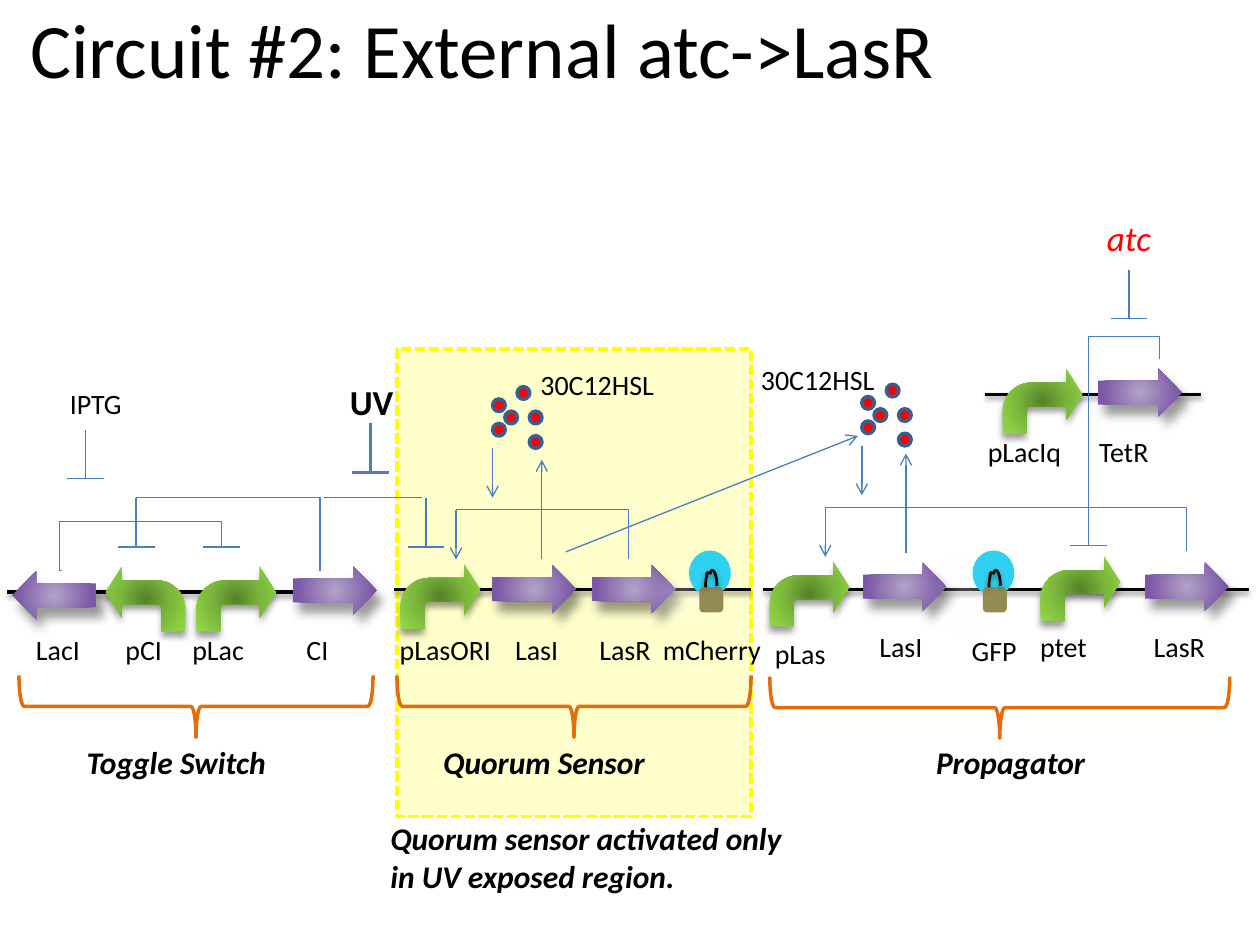
from lxml.etree import SubElement
from pptx import Presentation
from pptx.dml.color import RGBColor
from pptx.enum.dml import MSO_LINE
from pptx.enum.shapes import MSO_CONNECTOR, MSO_SHAPE
from pptx.enum.text import MSO_ANCHOR, PP_ALIGN
from pptx.oxml.ns import qn
from pptx.util import Pt

COLORS = {
    "text": "000000", "signal": "FF0000", "wire": "4B7EBC", "dot_edge": "3A5F8C",
    "highlight": "FFFF00", "brace": "E46C0A", "glow": "FFFFFF",
    "reporter": "30D0F0", "base": "948A54",
}
PROMOTER_STOPS = [(0, "57812A"), (50, "7BB73B"), (100, "92DA46")]
GENE_STOPS = [(0, "B3A2C7"), (80, "7B58A6"), (100, "7C57A8")]
# Shadows: color, opacity %, blur, distance, direction in degrees
AXIS_SHADOW = ("text", 38, 3.1, 1.6, 90)
PROMOTER_SHADOW = ("text", 40, 4, 3, 90)
GENE_SHADOW = ("text", 40, 6, 7, 60)
REPORTER_SHADOW = ("glow", 28, 11.8, 19.7, 141)

DOT_OFFSETS = [(7, 14), (21, 28), (21, 14), (14, 0), (0, 7), (0, 21)]
LOOP_START = (9.4, 20.9)
LOOP_CURVES = [
    ((9.4, 18.7), (9.4, 16.6), (10.1, 14.4)),
    ((10.1, 13.7), (10.1, 13), (10.1, 13)),
    ((10.8, 12.2), (11.5, 13), (12.2, 13)),
    ((12.2, 12.2), (13, 10.1), (14.4, 12.2)),
    ((15.8, 14.4), (15.8, 18), (15.8, 20.2)),
]


def rgb(name):
    return RGBColor.from_string(COLORS[name])


def curve_points(start, curves, steps=6):
    """Sample a chain of cubic Bezier curves."""
    points = [start]
    for first, second, end in curves:
        origin = points[-1]
        for step in range(1, steps + 1):
            t = step / steps
            u = 1 - t
            points.append(tuple(
                u**3 * a + 3 * u * u * t * b + 3 * u * t * t * c + t**3 * d
                for a, b, c, d in zip(origin, first, second, end)))
    return points


def add_shadow(shape, shadow):
    color, opacity, blur, distance, angle = shadow
    properties = shape._element.spPr
    for effects in properties.findall(qn("a:effectLst")):
        properties.remove(effects)
    outer = SubElement(SubElement(properties, qn("a:effectLst")), qn("a:outerShdw"),
                       blurRad=str(Pt(blur)), dist=str(Pt(distance)),
                       dir=str(angle * 60000), rotWithShape="0")
    tint = SubElement(outer, qn("a:srgbClr"), val=COLORS[color])
    SubElement(tint, qn("a:alpha"), val=str(opacity * 1000))


def fill_radial(shape, stops):
    properties = shape._element.spPr
    properties.remove(properties.find(qn("a:noFill")))
    gradient = properties.makeelement(qn("a:gradFill"), rotWithShape="1")
    stop_list = SubElement(gradient, qn("a:gsLst"))
    for position, color in stops:
        stop = SubElement(stop_list, qn("a:gs"), pos=str(position * 1000))
        SubElement(stop, qn("a:srgbClr"), val=color)
    circle = SubElement(gradient, qn("a:path"), path="circle")
    SubElement(circle, qn("a:fillToRect"), l="50000", t="50000", r="50000", b="50000")
    properties.find(qn("a:prstGeom")).addnext(gradient)


class CircuitSlide:
    """Draws gene circuit elements on one page; all lengths are points."""
    font = "Calibri"

    def __init__(self, page):
        self.page = page

    def set_text(self, frame, text, size, color="text", bold=False, italic=False,
                 align=PP_ALIGN.CENTER):
        frame.word_wrap = True
        frame.text = text
        para = frame.paragraphs[0]
        para.alignment = align
        font = para.font
        font.name, font.size, font.bold, font.italic = self.font, Pt(size), bold, italic
        font.color.rgb = rgb(color)

    def title(self, text, left, top, width, height):
        box = self.page.shapes.title
        box.left, box.top, box.width, box.height = map(Pt, (left, top, width, height))
        box.text_frame.vertical_anchor = MSO_ANCHOR.MIDDLE
        self.set_text(box.text_frame, text, 44)

    def label(self, text, center, top, width=82.1, size=16, **style):
        box = self.page.shapes.add_textbox(Pt(center - width / 2), Pt(top), Pt(width), Pt(24))
        self.set_text(box.text_frame, text, size, **style)

    def caption(self, text, left, top, width=175.7, height=35.3):
        box = self.page.shapes.add_textbox(Pt(left), Pt(top), Pt(width), Pt(height))
        self.set_text(box.text_frame, text, 18, bold=True, italic=True, align=PP_ALIGN.LEFT)

    def shape(self, kind, left, top, width, height, fill=None, line=None, weight=2):
        shape = self.page.shapes.add_shape(kind, Pt(left), Pt(top), Pt(width), Pt(height))
        shape.shadow.inherit = False
        if fill:
            shape.fill.solid()
            shape.fill.fore_color.rgb = rgb(fill)
        else:
            shape.fill.background()
        if line:
            shape.line.color.rgb = rgb(line)
            shape.line.width = Pt(weight)
        else:
            shape.line.fill.background()
        return shape

    def line(self, x1, y1, x2, y2, weight=0.75, color="wire", arrow=False, bend=None):
        """Draw a straight line, or an elbow that turns at the share `bend` of its width."""
        kind = MSO_CONNECTOR.STRAIGHT if bend is None else MSO_CONNECTOR.ELBOW
        wire = self.page.shapes.add_connector(kind, Pt(x1), Pt(y1), Pt(x2), Pt(y2))
        wire.line.color.rgb = rgb(color)
        wire.line.width = Pt(weight)
        properties = wire._element.spPr
        if arrow:
            SubElement(properties.find(qn("a:ln")), qn("a:tailEnd"), type="arrow")
        if bend is not None:
            guides = properties.find(qn("a:prstGeom")).find(qn("a:avLst"))
            SubElement(guides, qn("a:gd"), name="adj1", fmla=f"val {round(bend * 100000)}")
        SubElement(properties, qn("a:effectLst"))
        return wire

    def axis(self, left, right, y):
        add_shadow(self.line(left, y, right, y, weight=2, color="text"), AXIS_SHADOW)

    def bar(self, x, y, weight=0.75):
        self.line(x - 10.5, y, x + 10.5, y, weight)

    def inhibitor(self, x, top, bottom, weight=0.75):
        self.line(x, top, x, bottom, weight)
        self.bar(x, bottom, weight)

    def promoter(self, left, top, mirrored=False):
        arrow = self.shape(MSO_SHAPE.BENT_ARROW, left, top, 45.4, 36.7)
        for index, value in enumerate((0.37, 0.394, 0.25, 0.438)):
            arrow.adjustments[index] = value
        if mirrored:
            arrow._element.spPr.find(qn("a:xfrm")).set("flipH", "1")
        fill_radial(arrow, PROMOTER_STOPS)
        add_shadow(arrow, PROMOTER_SHADOW)

    def gene(self, x, y, rotation=270):
        arrow = self.shape(MSO_SHAPE.DOWN_ARROW, x - 13.7, y - 24.1, 27.4, 48.2)
        arrow.rotation = rotation
        fill_radial(arrow, GENE_STOPS)
        add_shadow(arrow, GENE_SHADOW)

    def reporter(self, left, top):
        head = self.shape(MSO_SHAPE.OVAL, left, top, 23.8, 25.9, "reporter")
        add_shadow(head, REPORTER_SHADOW)
        self.shape(MSO_SHAPE.ROUNDED_RECTANGLE, left + 5.8, top + 20.9, 13.7, 14.4, "base")
        points = [(Pt(left + x), Pt(top + y)) for x, y in curve_points(LOOP_START, LOOP_CURVES)]
        builder = self.page.shapes.build_freeform(*points[0])
        builder.add_line_segments(points[1:], close=False)
        loop = builder.convert_to_shape()
        loop.fill.background()
        loop.line.color.rgb = rgb("text")
        loop.line.width = Pt(1.5)
        add_shadow(loop, AXIS_SHADOW)

    def molecules(self, left, top):
        for x, y in DOT_OFFSETS:
            self.shape(MSO_SHAPE.OVAL, left + x, top + y, 7.2, 7.2, "signal", "dot_edge")

    def brace(self, center, y, length):
        brace = self.shape(MSO_SHAPE.LEFT_BRACE, center - 17.65, y - length / 2,
                           35.3, length, line="brace")
        brace.rotation = 270

    def highlight(self, left, top, width, height):
        area = self.shape(MSO_SHAPE.RECTANGLE, left, top, width, height, "highlight", "highlight")
        area.line.dash_style = MSO_LINE.SQUARE_DOT
        tint = area._element.spPr.find(qn("a:solidFill"))[0]
        SubElement(tint, qn("a:alpha"), val="20000")


def main():
    deck = Presentation()
    deck.slide_width, deck.slide_height = Pt(720), Pt(540)
    circuit = CircuitSlide(deck.slides.add_slide(deck.slide_layouts[5]))
    circuit.title("Circuit #2: External atc->LasR", -48.2, -18, 648, 90)
    circuit.highlight(226.8, 199.4, 202.3, 267.1)

    for left, right, y in [(225.4, 429.1, 337), (4.3, 208.8, 338.4),
                           (436.3, 713.5, 337), (563, 686.2, 225.4)]:
        circuit.axis(left, right, y)
    for left, top in [(112.3, 324), (229, 322.6), (439.9, 321.1), (594.7, 318.2), (573.1, 211)]:
        circuit.promoter(left, top)
    circuit.promoter(60.5, 324, mirrored=True)
    for x, y in [(191.5, 337.3), (305.3, 336.6), (362.2, 336.6),
                 (517, 335.2), (678.2, 335.2), (651.6, 224.3)]:
        circuit.gene(x, y)
    circuit.gene(31, 340.2, rotation=90)
    for left in (393.8, 555.8):
        circuit.reporter(left, 314.6)
    for left, top in [(281.5, 221), (492.5, 219.6)]:
        circuit.molecules(left, top)

    for x, top, bottom in [(645.1, 154.1, 182.2), (77.8, 284.4, 312.5), (126.7, 298.1, 312.5),
                           (243.4, 284.4, 312.5), (49, 245.5, 273.6)]:
        circuit.inhibitor(x, top, bottom)
    circuit.inhibitor(211.7, 241.9, 270, weight=1.5)
    circuit.bar(622.1, 311.8)
    for ends in [(185, 284.4, 241.2, 284.4), (471.6, 290.2, 678.2, 290.2),
                 (678.2, 290.2, 678.2, 314.6), (662.4, 192.2, 662.4, 205.2)]:
        circuit.line(*ends)
    for ends, bend in [((182.9, 326.2, 77.8, 284.4), 0), ((35.3, 326.2, 126.7, 298.1), -0.015),
                       ((359.3, 319.7, 260.6, 291), 0), ((662.4, 192.2, 622.1, 311.8), 1)]:
        circuit.line(*ends, bend=bend)
    for ends in [(260.6, 291.6, 260.6, 319.7), (281.5, 256.3, 281.5, 284.4),
                 (309.6, 319.7, 309.6, 262.8), (471.6, 290.2, 471.6, 318.2),
                 (492.5, 254.9, 492.5, 283), (323.3, 315.4, 490.3, 249.1),
                 (517.7, 316.1, 517.7, 259.2)]:
        circuit.line(*ends, arrow=True)

    for text, center, top in [
            ("CI", 181.4, 357.8), ("pLasORI", 254.5, 357.8), ("LasI", 306.7, 357.8),
            ("mCherry", 406.8, 357.8), ("LasI", 514.8, 356.4), ("GFP", 568.1, 358.6),
            ("TetR", 642.2, 244.8), ("30C12HSL", 341.3, 206.6), ("30C12HSL", 467.3, 203.8),
            ("IPTG", 54.7, 217.4)]:
        circuit.label(text, center, top)
    for text, center, top in [
            ("LacI", 33.1, 357.8), ("pCI", 82.1, 357.8), ("pLac", 124.6, 357.8),
            ("LasR", 357.1, 357.8), ("pLas", 457.2, 360), ("ptet", 607.7, 356.4),
            ("LasR", 673.9, 356.4), ("pLacIq", 585.4, 244.8)]:
        circuit.label(text, center, top, width=66.2)
    circuit.label("UV", 212.4, 213.8, size=20, bold=True)
    circuit.label("atc", 645.1, 120.2, size=20, color="signal", italic=True)

    for center, y, length in [(112, 403.6, 202.3), (328, 403.6, 202.3), (571.3, 404.3, 262.8)]:
        circuit.brace(center, y, length)
    for text, left in [("Toggle Switch", 42.5), ("Quorum Sensor", 246.2), ("Propagator", 527.8)]:
        circuit.caption(text, left, 421.2)
    circuit.caption("Quorum sensor activated only in UV exposed region.", 216, 464.4, 247, 46.1)
    deck.save("out.pptx")


if __name__ == "__main__":
    main()
